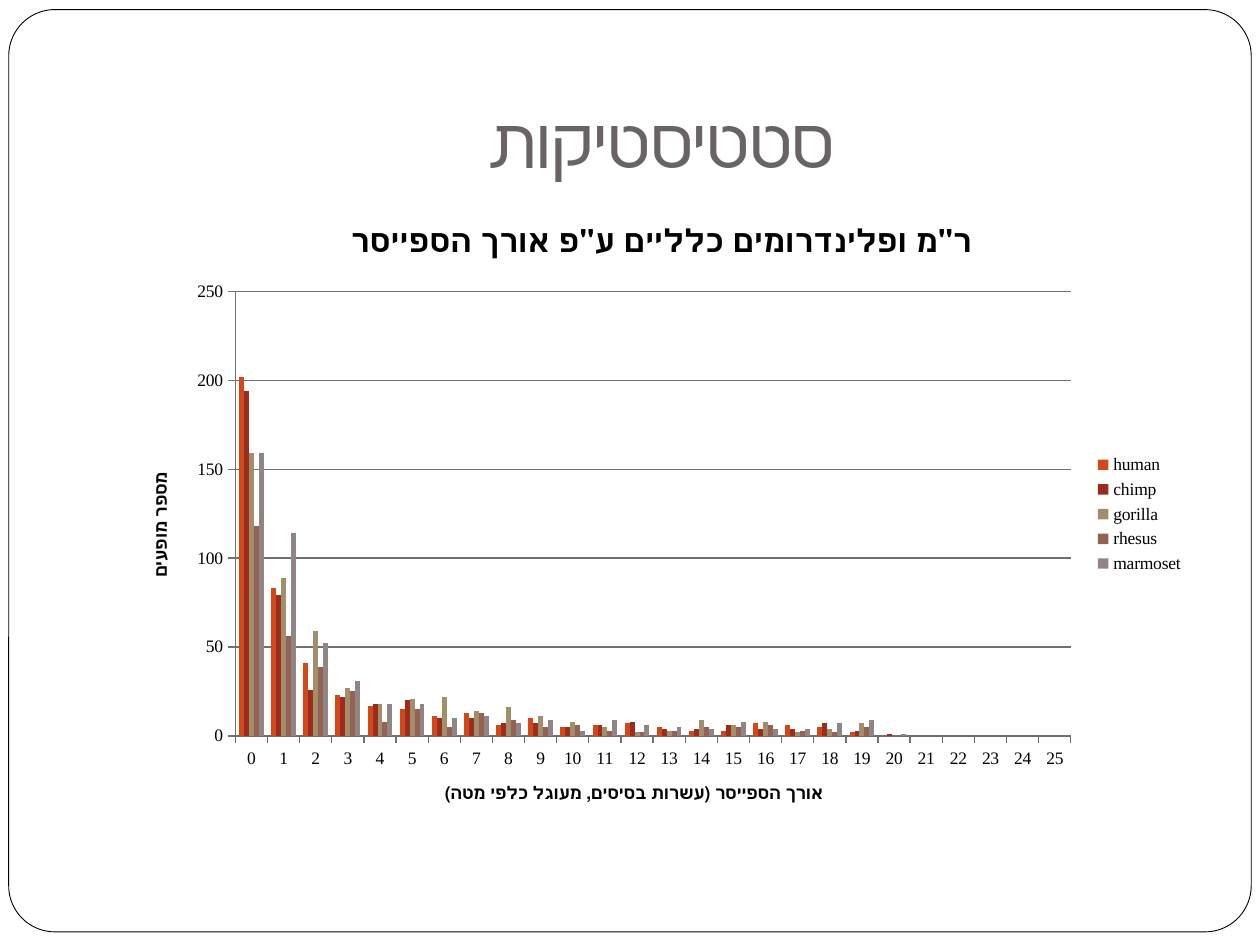
from pptx import Presentation
from pptx.chart.data import CategoryChartData
from pptx.dml.color import RGBColor
from pptx.enum.chart import XL_CHART_TYPE, XL_LEGEND_POSITION, XL_TICK_MARK
from pptx.enum.shapes import MSO_SHAPE
from pptx.enum.text import MSO_ANCHOR, PP_ALIGN
from pptx.util import Pt

# Content
HEADING = "סטטיסטיקות"
CHART_TITLE = 'ר"מ ופלינדרומים כלליים ע"פ אורך הספייסר'
SPACER_TITLE = "אורך הספייסר (עשרות בסיסים, מעוגל כלפי מטה)"
COUNT_TITLE = "מספר מופעים"
SPACER_LENGTHS = [str(length) for length in range(26)]

BLACK = RGBColor(0x00, 0x00, 0x00)
WHITE = RGBColor(0xFF, 0xFF, 0xFF)
HEADING_GRAY = RGBColor(0x69, 0x64, 0x64)
AXIS_GRAY = RGBColor(0x70, 0x70, 0x70)

# Species, bar colour, occurrences by spacer length (none beyond 20)
SPECIES = [
    ("human", RGBColor(0xD3, 0x48, 0x17),
     [202, 83, 41, 23, 17, 15, 11, 13, 6, 10, 5, 6, 7, 5, 3, 3, 7, 6, 5, 2, 0]),
    ("chimp", RGBColor(0x9B, 0x2D, 0x1F),
     [194, 79, 26, 22, 18, 20, 10, 10, 7, 7, 5, 6, 8, 4, 4, 6, 4, 4, 7, 3, 1]),
    ("gorilla", RGBColor(0xA2, 0x8E, 0x6A),
     [159, 89, 59, 27, 18, 21, 22, 14, 16, 11, 8, 5, 2, 3, 9, 6, 8, 2, 4, 7, 0]),
    ("rhesus", RGBColor(0x95, 0x62, 0x51),
     [118, 56, 39, 25, 8, 15, 5, 13, 9, 5, 6, 3, 2, 3, 5, 5, 6, 3, 2, 5, 0]),
    ("marmoset", RGBColor(0x91, 0x84, 0x85),
     [159, 114, 52, 31, 18, 18, 10, 11, 7, 9, 3, 9, 6, 5, 4, 8, 4, 4, 7, 9, 1]),
]


def write_text(frame, text, size, font="Times New Roman", color=BLACK, bold=False):
    """Fill a text frame with one centred right-to-left paragraph."""
    paragraph = frame.paragraphs[0]
    paragraph.alignment = PP_ALIGN.CENTER
    paragraph._p.get_or_add_pPr().set("rtl", "1")
    run = paragraph.add_run()
    run.text = text
    run.font.size = Pt(size)
    run.font.name = font
    run.font.bold = bold
    run.font.color.rgb = color


deck = Presentation()
deck.slide_width, deck.slide_height = Pt(720), Pt(540)
slide = deck.slides.add_slide(deck.slide_layouts[5])

# Rounded frame behind everything
border = slide.shapes.add_shape(
    MSO_SHAPE.ROUNDED_RECTANGLE, Pt(5), Pt(5.5), Pt(710), Pt(527))
border.adjustments[0] = 0.05
border.shadow.inherit = False
border.fill.solid()
border.fill.fore_color.rgb = WHITE
border.line.color.rgb = BLACK
border.line.width = Pt(0.5)
slide.shapes._spTree.insert(2, border._element)

# Heading
heading = slide.shapes.title
heading.left, heading.top, heading.width, heading.height = Pt(72), Pt(21.6), Pt(612), Pt(90)
heading.text_frame.vertical_anchor = MSO_ANCHOR.BOTTOM
heading.text_frame.margin_bottom = Pt(7.2)
write_text(heading.text_frame, HEADING, 40, font="Cabin", color=HEADING_GRAY)

# Chart
counts = CategoryChartData()
counts.categories = SPACER_LENGTHS
for name, _, occurrences in SPECIES:
    missing = len(SPACER_LENGTHS) - len(occurrences)
    counts.add_series(name, occurrences + [None] * missing)
chart = slide.shapes.add_chart(
    XL_CHART_TYPE.COLUMN_CLUSTERED, Pt(72), Pt(113.8), Pt(612), Pt(360), counts).chart
chart.font.size = Pt(10)
chart.font.name = "Times New Roman"
chart.font.color.rgb = BLACK
write_text(chart.chart_title.text_frame, CHART_TITLE, 18, bold=True)
chart.chart_title.include_in_layout = False

# Bars
bars = chart.plots[0]
bars.gap_width = 150
bars.overlap = 0
bars.vary_by_categories = False
for series, (_, color, _) in zip(bars.series, SPECIES):
    series.format.fill.solid()
    series.format.fill.fore_color.rgb = color

# Axes
for axis, title in ((chart.category_axis, SPACER_TITLE), (chart.value_axis, COUNT_TITLE)):
    write_text(axis.axis_title.text_frame, title, 10, bold=True)
    axis.major_tick_mark = XL_TICK_MARK.OUTSIDE
    axis.minor_tick_mark = XL_TICK_MARK.NONE
    axis.format.line.color.rgb = AXIS_GRAY
    axis.format.line.width = Pt(0.75)
chart.value_axis.minimum_scale = 0
chart.value_axis.maximum_scale = 250
chart.value_axis.major_unit = 50
gridlines = chart.value_axis.major_gridlines.format.line
gridlines.color.rgb = AXIS_GRAY
gridlines.width = Pt(0.75)

# Legend
chart.has_legend = True
chart.legend.position = XL_LEGEND_POSITION.RIGHT
chart.legend.include_in_layout = False

deck.save("out.pptx")
